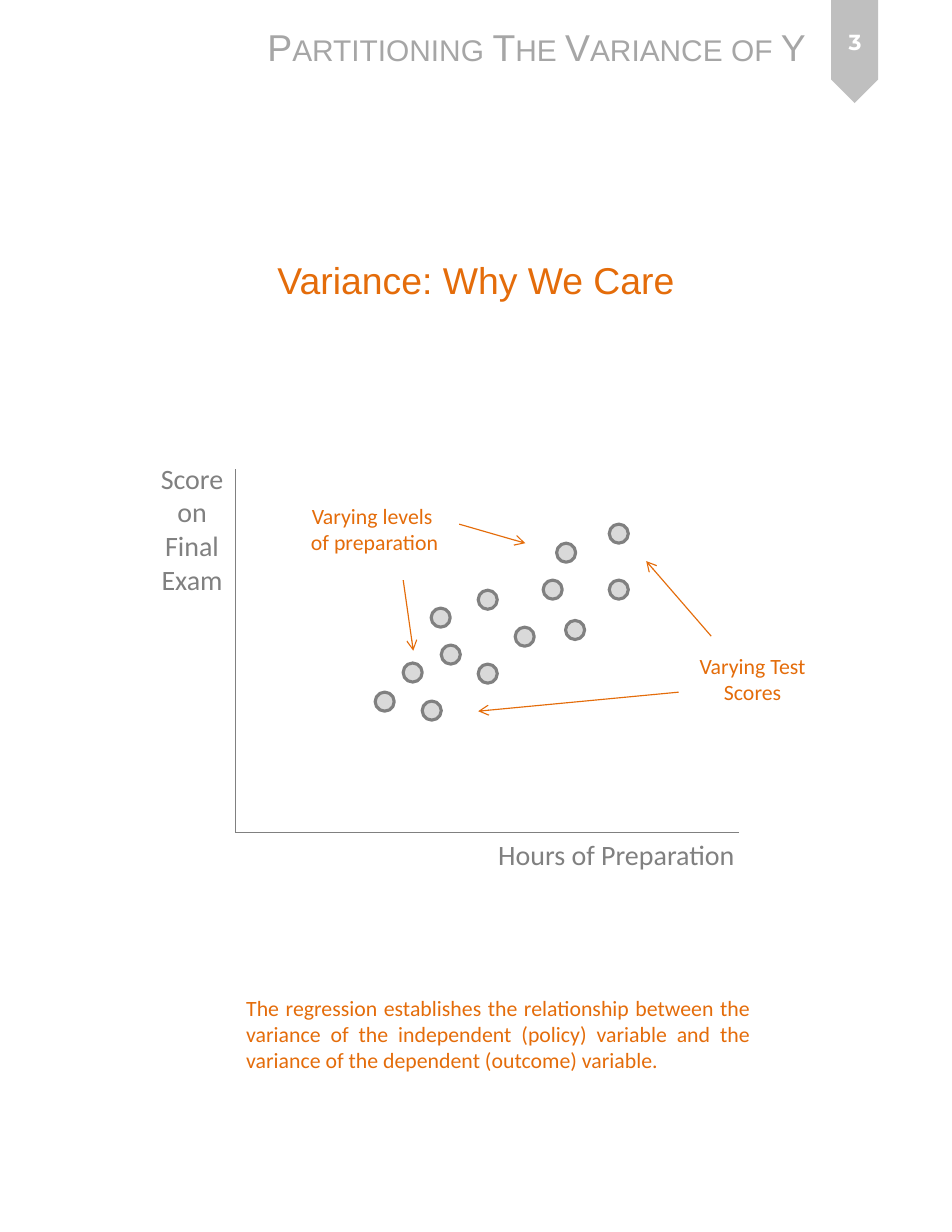
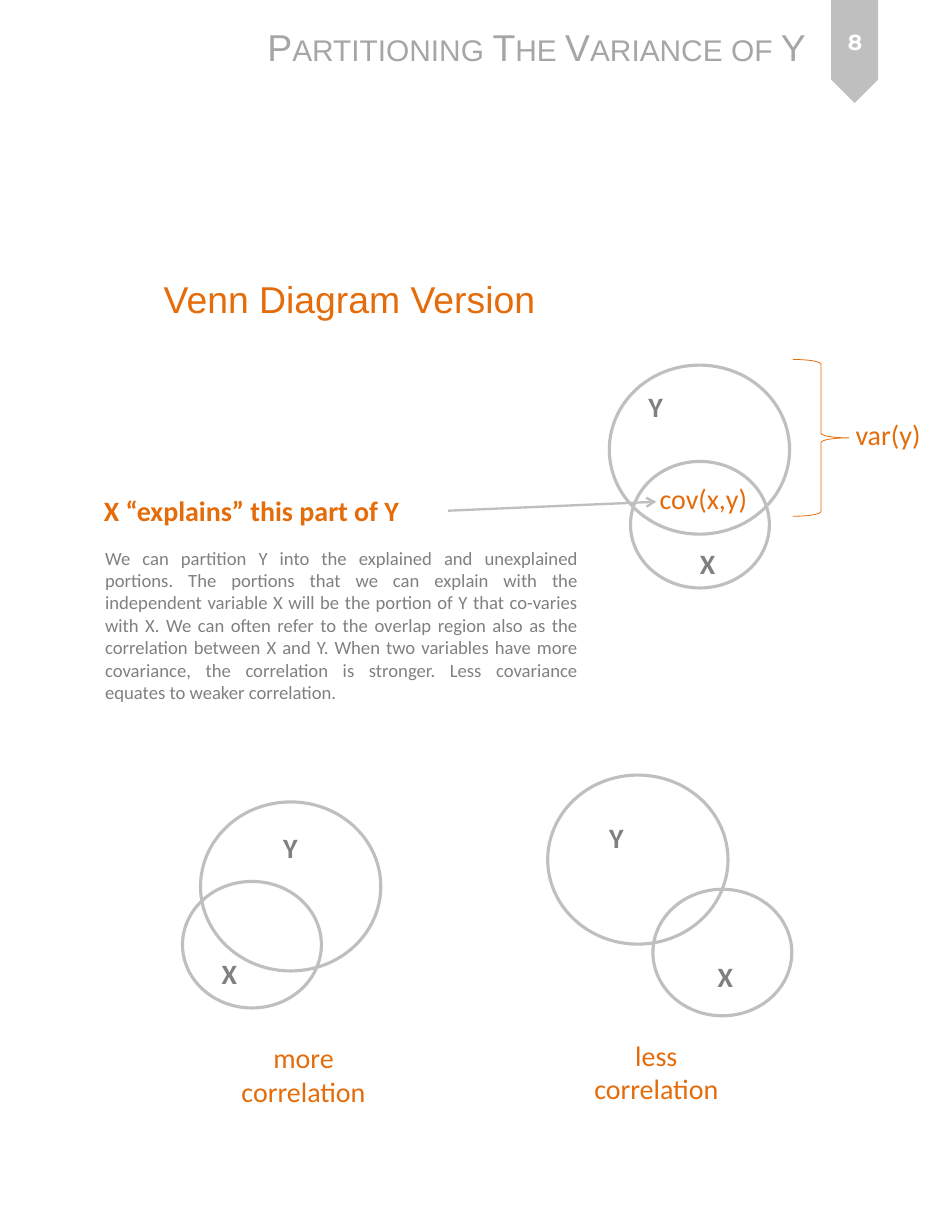
from copy import deepcopy
from dataclasses import dataclass

from lxml.etree import SubElement
from pptx import Presentation
from pptx.dml.color import RGBColor
from pptx.enum.shapes import MSO_CONNECTOR as Connector, MSO_SHAPE as Preset
from pptx.enum.text import MSO_ANCHOR as Anchor, MSO_AUTO_SIZE as AutoSize, PP_ALIGN as Align
from pptx.oxml.ns import qn
from pptx.util import Emu, Pt

EMU_PER_PX = 9144  # 100 px to the inch
TITLE_ONLY = 5


@dataclass(frozen=True)
class Theme:
    accent: str = "E46C0A"
    ink: str = "808080"
    header: str = "A6A6A6"
    outline: str = "BFBFBF"
    dot: str = "D9D9D9"
    white: str = "FFFFFF"
    heading_font: str = "Arial"
    body_font: str = "Calibri"
    number_font: str = "Montserrat"
    heading_size: int = 24
    label_size: int = 18
    note_size: int = 14
    body_size: int = 12


def px(*lengths):
    return [Emu(length * EMU_PER_PX) for length in lengths]


def rgb(color):
    return RGBColor.from_string(color)


class Deck:
    def __init__(self, theme):
        self.theme = theme
        self.presentation = Presentation()
        self.presentation.slide_width, self.presentation.slide_height = px(850, 1100)
        self.slide = None

    def new_slide(self, number, title, title_box):
        """Add a slide with its title, running header and page marker."""
        theme = self.theme
        layout = self.presentation.slide_layouts[TITLE_ONLY]
        self.slide = self.presentation.slides.add_slide(layout)
        self.shape(Preset.PENTAGON, (717, 25, 92, 42), fill=theme.outline).rotation = 90
        marker = self.text(number, (726, 8, 75, 59), theme.note_size, theme.white,
                           font=theme.number_font, bold=True, align=Align.CENTER, grow=False)
        marker.text_frame.vertical_anchor = Anchor.MIDDLE
        header = self.text("Partitioning The Variance of Y", (229, 17, 506, 50),
                           theme.heading_size, theme.header, font=theme.heading_font, wrap=False)
        header.text_frame.paragraphs[0].runs[0].font._element.set("cap", "small")
        placeholder = self.slide.shapes.title
        placeholder.left, placeholder.top, placeholder.width, placeholder.height = px(*title_box)
        self.fill_text(placeholder, title, theme.heading_size, theme.accent,
                       font=theme.heading_font, align=Align.CENTER, grow=False)

    def fill_text(self, shape, content, size, color, font=None, bold=False,
                  align=Align.LEFT, wrap=True, grow=True):
        frame = shape.text_frame
        frame.text = content
        frame.word_wrap = wrap
        frame.auto_size = AutoSize.SHAPE_TO_FIT_TEXT if grow else AutoSize.NONE
        frame.vertical_anchor = Anchor.TOP
        paragraph = frame.paragraphs[0]
        paragraph.alignment = align
        for run in paragraph.runs:
            run.font.name = font or self.theme.body_font
            run.font.size = Pt(size)
            run.font.bold = bold
            run.font.color.rgb = rgb(color)
        # Line breaks take the size of the text around them
        for line_break in paragraph._p.findall(qn("a:br")):
            line_break.append(deepcopy(paragraph.runs[0].font._element))

    def text(self, content, box, size, color, **style):
        shape = self.slide.shapes.add_textbox(*px(*box))
        self.fill_text(shape, content, size, color, **style)
        return shape

    def shape(self, preset, box, fill=None, line=None, weight=2):
        shape = self.slide.shapes.add_shape(preset, *px(*box))
        shape.shadow.inherit = False
        if fill:
            shape.fill.solid()
            shape.fill.fore_color.rgb = rgb(fill)
        else:
            shape.fill.background()
        if line:
            shape.line.color.rgb = rgb(line)
            shape.line.width = Pt(weight)
        else:
            shape.line.fill.background()
        return shape

    def line(self, start, end, color, weight=0.75, arrow=False):
        connector = self.slide.shapes.add_connector(Connector.STRAIGHT, *px(*start, *end))
        connector.line.color.rgb = rgb(color)
        connector.line.width = Pt(weight)
        if arrow:
            SubElement(connector.line._get_or_add_ln(), qn("a:tailEnd"), type="arrow")
        SubElement(connector._element.spPr, qn("a:effectLst"))

    def venn(self, y_circle, x_circle, y_label, x_label):
        """Draw a large Y and a small X circle; all arguments are left, top."""
        theme = self.theme
        for corner, size in ((x_circle, (124, 113)), (y_circle, (161, 151))):
            self.shape(Preset.OVAL, (*corner, *size), line=theme.outline)
        for letter, corner, width in (("X", x_label, 110), ("Y", y_label, 33)):
            self.text(letter, (*corner, width, 40), theme.label_size, theme.ink, bold=True)


def build_scatter_slide(deck):
    theme = deck.theme
    deck.new_slide("3", "Variance: Why We Care", (-25, 225, 900, 125))

    # Axes and their labels
    origin = (210, 743)
    for axis_end in ((210, 419), (660, 743)):
        deck.line(axis_end, origin, theme.ink)
    deck.text("Hours of Preparation", (435, 743, 234, 40), theme.label_size, theme.ink, wrap=False)
    deck.text("Score\von\vFinal\vExam", (133, 407, 77, 131), theme.label_size, theme.ink,
              align=Align.CENTER, wrap=False)

    # Students
    students = ((335, 618), (360, 592), (377, 626), (385, 543), (394, 576), (427, 527), (427, 593),
                (460, 560), (485, 518), (497, 485), (505, 554), (544, 468), (544, 518))
    for student in students:
        deck.shape(Preset.OVAL, (*student, 17, 17), fill=theme.dot, line=theme.ink)

    # Callouts
    callouts = (("Varying levels \vof preparation", (267, 444, 135, 57)),
                ("Varying Test\vScores", (614, 578, 116, 57)))
    for content, box in callouts:
        deck.text(content, box, theme.note_size, theme.accent, align=Align.CENTER, wrap=False)
    arrows = (((360, 518), (369, 581)), ((410, 468), (469, 485)),
              ((606, 618), (427, 635)), ((635, 568), (577, 501)))
    for start, end in arrows:
        deck.line(start, end, theme.accent, arrow=True)

    # Conclusion
    deck.text("The regression establishes the relationship between the variance of the independent "
              "(policy) variable and the variance of the dependent (outcome) variable.",
              (210, 883, 470, 81), theme.note_size, theme.accent, align=Align.JUSTIFY)


def build_venn_slide(deck):
    theme = deck.theme
    deck.new_slide("8", "Venn Diagram Version", (42, 242, 540, 62))

    # Circles: main diagram, more correlation, less correlation
    deck.venn((544, 326), (563, 412), (569, 343), (615, 483))
    deck.venn((179, 716), (163, 787), (243, 737), (188, 849))
    deck.venn((489, 692), (583, 794), (534, 728), (631, 852))

    # Labels of the main diagram
    deck.shape(Preset.RIGHT_BRACE, (708, 321, 50, 140), line=theme.accent, weight=0.5)
    for content, box in (("cov(x,y)", (579, 425, 99, 40)), ("var(y)", (754, 368, 79, 40))):
        deck.text(content, box, theme.label_size, theme.accent, wrap=False)
    deck.line((400, 456), (586, 448), theme.outline, weight=1.5, arrow=True)

    # Explanation
    deck.text("X “explains” this part of Y", (83, 436, 292, 40), theme.label_size, theme.accent,
              bold=True)
    deck.text("We can partition Y into the explained and unexplained portions. The portions that we "
              "can explain with the independent variable X will be the portion of Y that co-varies "
              "with X. We can often refer to the overlap region also as the correlation between X "
              "and Y. When two variables have more covariance, the correlation is stronger. Less "
              "covariance equates to weaker correlation.",
              (84, 483, 442, 151), theme.body_size, theme.ink, align=Align.JUSTIFY)

    # Captions of the lower diagrams
    for amount, left, top in (("more", 205, 924), ("less", 520, 922)):
        deck.text(f"{amount}\vcorrelation", (left, top, 132, 71), theme.label_size, theme.accent,
                  align=Align.CENTER, wrap=False)


def main():
    deck = Deck(Theme())
    build_scatter_slide(deck)
    build_venn_slide(deck)
    deck.presentation.save("out.pptx")


if __name__ == "__main__":
    main()
